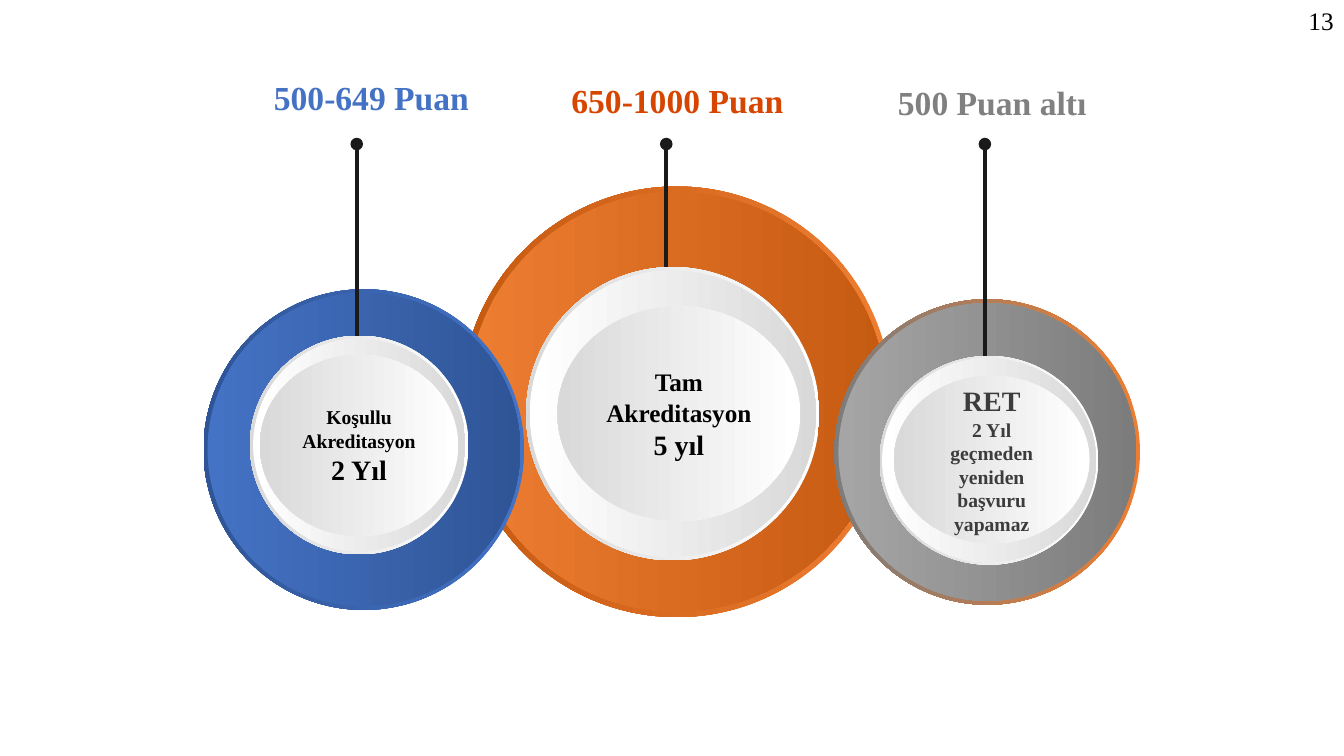
from lxml import etree
from pptx import Presentation
from pptx.dml.color import RGBColor
from pptx.enum.shapes import MSO_CONNECTOR, MSO_SHAPE
from pptx.enum.text import MSO_ANCHOR, PP_ALIGN
from pptx.oxml.ns import qn
from pptx.util import Cm, Pt

OVAL = MSO_SHAPE.OVAL
STRAIGHT = MSO_CONNECTOR.STRAIGHT
MIDDLE, TOP = MSO_ANCHOR.MIDDLE, MSO_ANCHOR.TOP
LEFT, CENTER, RIGHT = PP_ALIGN.LEFT, PP_ALIGN.CENTER, PP_ALIGN.RIGHT

FONT = "Times New Roman"
BLACK, PIN, DARK_GRAY = "000000", "1A1A1A", "3C3C3C"
WHITE, SILVER = "FFFFFF", "D9D9D9"
PIN_TOP = 3.63

# left, top, size, rim width, light, dark, rim light
RINGS = [
    (11.63, 4.70, 10.85, 0.14, "ED7D31", "C55A11", "ED7D31"),
    (5.13, 7.29, 8.08, 0.10, "4472C4", "2F5597", "4472C4"),
    (21.03, 7.54, 7.70, 0.10, "A5A5A5", "7C7C7C", "ED7D31"),
]
# x, bottom
PINS = [(16.79, 7.34), (8.99, 9.30), (24.82, 10.11)]
# text, left, top, width, colour, alignment, anchor, wrap
LABELS = [
    ("500-649 Puan", 6.50, 1.80, 5.72, "4472C4", CENTER, MIDDLE, True),
    ("500 Puan altı", 22.38, 1.93, 5.72, "808080", LEFT, MIDDLE, True),
    ("650-1000 Puan", 14.15, 1.88, 5.89, "D74601", LEFT, TOP, False),
]
# disc box, rim width, face box, text colour, (text, size) lines
DISCS = [
    ((22.17, 8.97, 5.51, 5.26), 0.06, (22.53, 9.47, 4.93, 4.22), DARK_GRAY,
     [("RET", 20), ("2 Yıl geçmeden yeniden başvuru yapamaz", 14)]),
    ((13.26, 6.73, 7.39, 7.39), 0.09, (14.05, 7.72, 6.12, 5.41), BLACK,
     [("Tam Akreditasyon", 18), ("5 yıl", 20)]),
    ((6.30, 8.46, 5.51, 5.51), 0.08, (6.55, 8.94, 5.00, 4.57), BLACK,
     [("Koşullu Akreditasyon", 14), ("2 Yıl", 20)]),
]


def color(hex_string):
    return RGBColor.from_string(hex_string)


def write_lines(text_frame, lines, text_color, alignment, anchor, bold=True, wrap=True):
    text_frame.word_wrap = wrap
    text_frame.vertical_anchor = anchor
    for index, (text, size) in enumerate(lines):
        paragraph = text_frame.add_paragraph() if index else text_frame.paragraphs[0]
        paragraph.alignment = alignment
        run = paragraph.add_run()
        run.text = text
        run.font.name = FONT
        run.font.size = Pt(size)
        run.font.bold = bold
        run.font.color.rgb = color(text_color)


def add_ellipse(slide, box, light, dark, angle):
    shape = slide.shapes.add_shape(OVAL, *map(Cm, box))
    shape.shadow.inherit = False
    shape.line.fill.background()
    shape.fill.gradient()
    shape.fill.gradient_angle = angle
    for stop, position, stop_color in zip(shape.fill.gradient_stops, (0.01, 1), (light, dark)):
        stop.position = position
        stop.color.rgb = color(stop_color)
    return shape


def add_rimmed_ellipse(slide, box, rim, light, dark, rim_light):
    """Lay an ellipse over a slightly larger one shaded the opposite way."""
    left, top, width, height = box
    add_ellipse(slide, box, rim_light, dark, 180)
    inner_box = (left + rim, top + rim, width - 2 * rim, height - 2 * rim)
    add_ellipse(slide, inner_box, light, dark, 0)


def add_pin(slide, x, bottom):
    connector = slide.shapes.add_connector(STRAIGHT, Cm(x), Cm(PIN_TOP), Cm(x), Cm(bottom))
    connector.line.color.rgb = color(PIN)
    connector.line.width = Pt(3)
    etree.SubElement(connector.line._get_or_add_ln(), qn("a:headEnd"), type="oval")
    etree.SubElement(connector._element.spPr, qn("a:effectLst"))


def add_text(slide, box, text, size, text_color, alignment, anchor, bold=True, wrap=True):
    text_box = slide.shapes.add_textbox(*map(Cm, box))
    write_lines(text_box.text_frame, [(text, size)], text_color, alignment, anchor, bold, wrap)


def main():
    presentation = Presentation()
    presentation.slide_width, presentation.slide_height = Cm(33.87), Cm(19.05)
    slide = presentation.slides.add_slide(presentation.slide_layouts[6])

    for left, top, size, rim, light, dark, rim_light in RINGS:
        add_rimmed_ellipse(slide, (left, top, size, size), rim, light, dark, rim_light)
    for x, bottom in PINS:
        add_pin(slide, x, bottom)
    for text, left, top, width, text_color, alignment, anchor, wrap in LABELS:
        add_text(slide, (left, top, width, 1.27), text, 24, text_color, alignment, anchor,
                 wrap=wrap)
    for disc_box, rim, face_box, text_color, lines in DISCS:
        add_rimmed_ellipse(slide, disc_box, rim, WHITE, SILVER, WHITE)
        face = add_ellipse(slide, face_box, WHITE, SILVER, 180)
        write_lines(face.text_frame, lines, text_color, CENTER, MIDDLE)
    add_text(slide, (26.24, 0, 7.62, 1.02), "13", 18, BLACK, RIGHT, TOP, bold=False)

    presentation.save("out.pptx")


if __name__ == "__main__":
    main()
